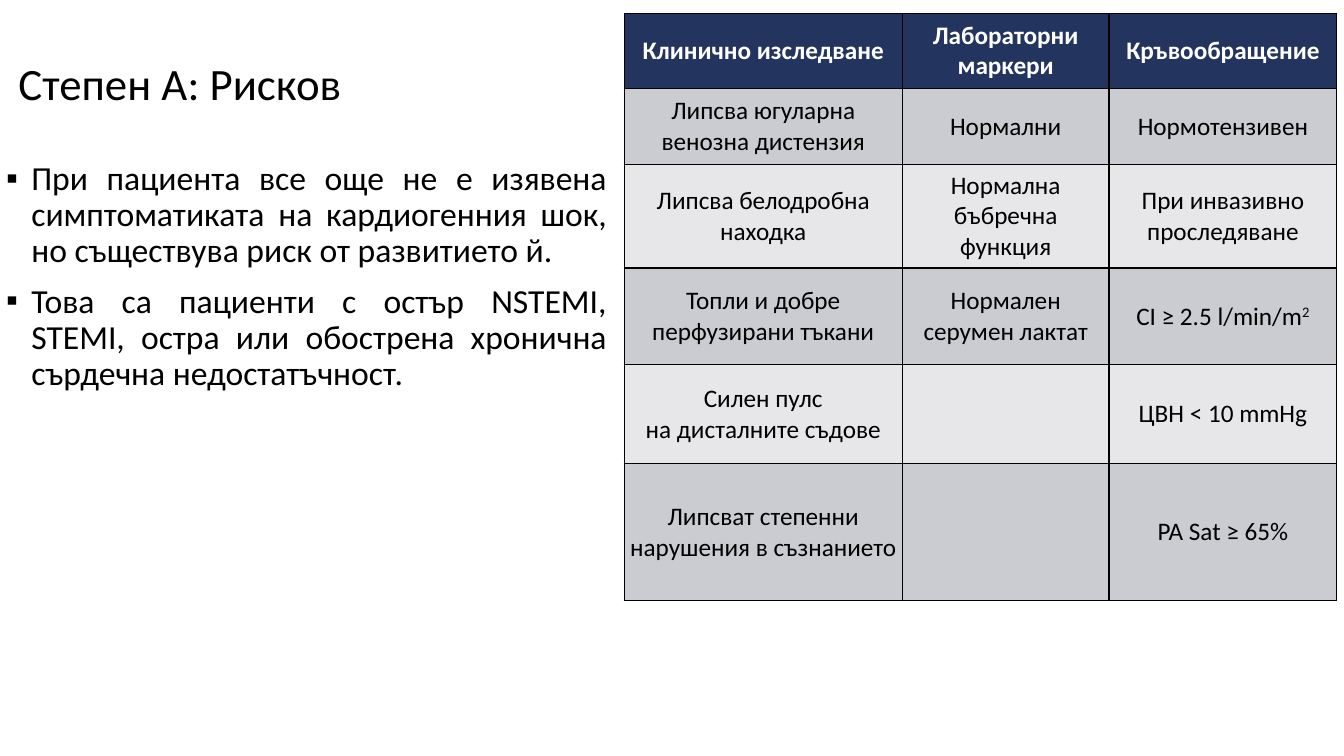
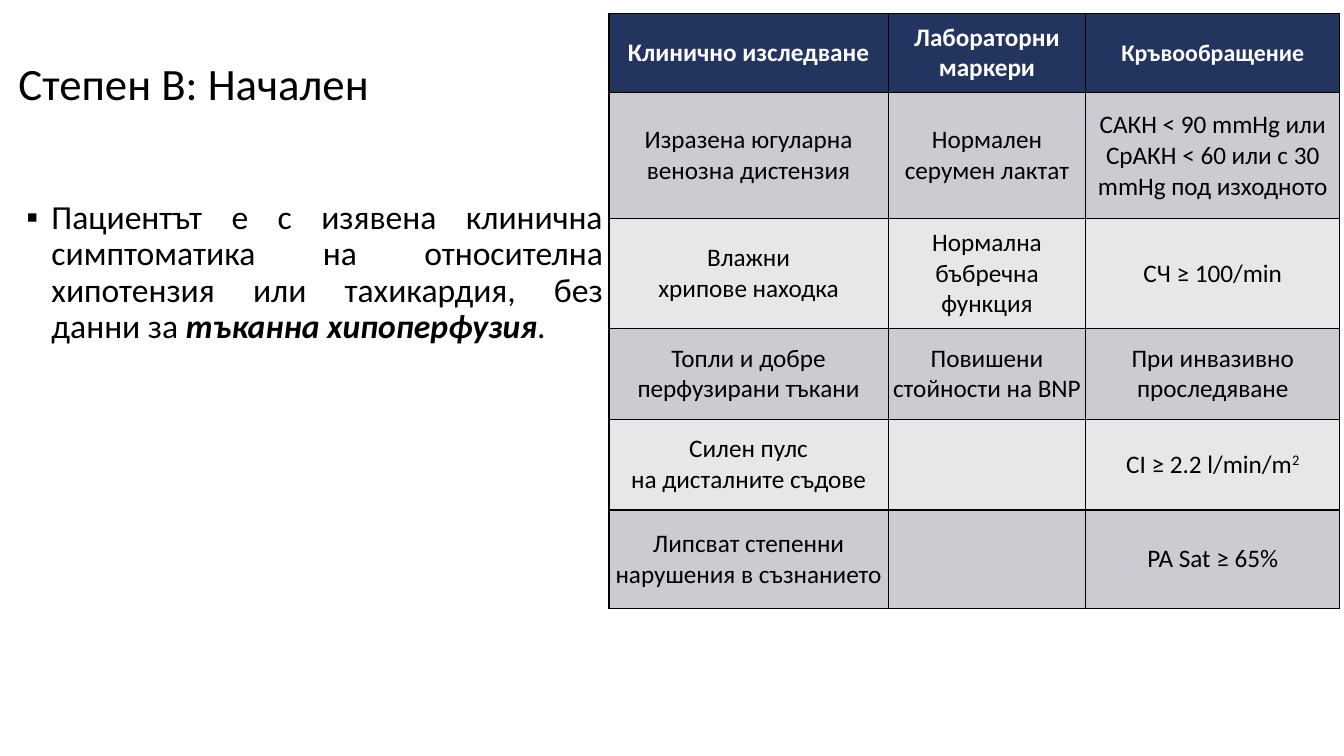
from lxml import etree
from pptx import Presentation, util as u
from pptx.dml.color import RGBColor
from pptx.enum import text
from pptx.oxml import ns

WIDTH, HEIGHT = u.Inches(13.33), u.Inches(7.5)
FONT = "Calibri"
BLACK = RGBColor(0x00, 0x00, 0x00)
WHITE = RGBColor(0xFF, 0xFF, 0xFF)
NAVY = RGBColor(0x23, 0x34, 0x5E)
BANDS = (RGBColor(0xCB, 0xCC, 0xD1), RGBColor(0xE7, 0xE7, 0xE9))

TITLE_BOX = (1, 1.73, 86.27, 19.33)
BODY_HEIGHT = 45.47
TABLE_TOP = 1.73
INSET = u.Inches(0.05)
BULLET_INDENT = u.Inches(0.25)
BORDER = u.Pt(1)

EMPHASIS = {"bold": True, "italic": True}
RAISED = {"raised": True}
HEADINGS = ["Клинично изследване", "Лабораторни маркери"]
WARM = "Топли и добре перфузирани тъкани"
PULSE = "Силен пулс\nна дисталните съдове"
AWARE = "Липсват степенни нарушения в съзнанието"
KIDNEY = "Нормална бъбречна\nфункция"
INVASIVE = "При инвазивно проследяване"
SATURATION = "PA Sat ≥ 65%"

STAGES = [
    {
        "title": "Степен А: Pисков",
        "body_box": (0.08, 20.67, 45.46, BODY_HEIGHT),
        "body": [
            "При пациента все още не е изявена симптоматиката на "
            "кардиогенния шок, но съществува риск от развитието й.",
            "Това са пациенти с остър NSTEMI, STEMI, остра или обострена "
            "хронична сърдечна недостатъчност.",
        ],
        "table_left": 46.44,
        "columns": (20.7, 15.38, 16.95),
        "rows": (10, 10, 13.73, 12.8, 13.07, 18.13),
        "cells": [
            HEADINGS + ["Кръвообращение"],
            ["Липсва югуларна\nвенозна дистензия", "Нормални", "Нормотензивен"],
            ["Липсва белодробна находка", KIDNEY, INVASIVE],
            [WARM, "Нормален\nсерумен лактат",
             [("CI ≥ 2.5 l/min/m", {}), ("2", RAISED)]],
            [PULSE, "", "ЦВН < 10 mmHg"],
            [AWARE, "", SATURATION],
        ],
    },
    {
        "title": "Степен B: Начален",
        "body_box": (1.58, 25.87, 43.66, BODY_HEIGHT),
        "body": [
            [("Пациентът е с изявена клинична симптоматика на относителна "
              "хипотензия или тахикардия, без данни за ", {}),
             ("тъканна хипоперфузия", EMPHASIS),
             (".", {})],
        ],
        "table_left": 45.31,
        "columns": (20.78, 14.7, 18.9),
        "rows": (10.53, 16.67, 14.53, 12, 12, 13.07),
        "cells": [
            HEADINGS + [[("Кръвообращение", {"size": 17})]],
            ["Изразена югуларна венозна дистензия", "Нормален серумен лактат",
             "САКН < 90 mmHg или СрАКН < 60 или с 30 mmHg под изходното"],
            ["Влажни\nхрипове находка", KIDNEY, "СЧ ≥ 100/min"],
            [WARM, "Повишени стойности на BNP", INVASIVE],
            [PULSE, "", [("CI ≥ 2.2 l/min/m", {}), ("2", RAISED)]],
            [AWARE, "", SATURATION],
        ],
    },
]


def across(percent):
    return round(WIDTH * percent / 100)


def down(percent):
    return round(HEIGHT * percent / 100)


def place(shape, box):
    left, top, width, height = box
    shape.left, shape.top = across(left), down(top)
    shape.width, shape.height = across(width), down(height)


def add_runs(paragraph, content, size, color=BLACK, bold=False):
    """Add a plain string, or a list of (words, style) pairs."""
    pairs = [(content, {})] if isinstance(content, str) else content
    for words, style in pairs:
        run = paragraph.add_run()
        run.text = words
        font = run.font
        font.name = FONT
        font.size = u.Pt(style.get("size", size))
        font.bold = style.get("bold", bold)
        font.italic = style.get("italic", False)
        font.color.rgb = color
        if style.get("raised"):
            run._r.get_or_add_rPr().set("baseline", "30000")


def next_paragraph(frame, index):
    return frame.add_paragraph() if index else frame.paragraphs[0]


def prepare_frame(shape, anchor):
    frame = shape.text_frame
    frame.word_wrap = True
    frame.auto_size = text.MSO_AUTO_SIZE.NONE
    frame.vertical_anchor = anchor
    frame.margin_left = frame.margin_right = INSET
    frame.margin_top = frame.margin_bottom = INSET
    return frame


def set_title(shape, words):
    place(shape, TITLE_BOX)
    frame = prepare_frame(shape, text.MSO_ANCHOR.MIDDLE)
    paragraph = frame.paragraphs[0]
    paragraph.alignment = text.PP_ALIGN.LEFT
    paragraph.line_spacing = 0.9
    add_runs(paragraph, words, 32)


def add_bullet(paragraph):
    properties = paragraph._p.get_or_add_pPr()
    properties.set("marL", str(BULLET_INDENT))
    properties.set("indent", str(-BULLET_INDENT))
    etree.SubElement(properties, ns.qn("a:buFont")).set("typeface", "Arial")
    etree.SubElement(properties, ns.qn("a:buChar")).set("char", "▪")


def set_body(shape, box, items):
    place(shape, box)
    frame = prepare_frame(shape, text.MSO_ANCHOR.TOP)
    for index, item in enumerate(items):
        paragraph = next_paragraph(frame, index)
        add_bullet(paragraph)
        paragraph.alignment = text.PP_ALIGN.JUSTIFY
        paragraph.line_spacing = 0.9
        paragraph.space_before = u.Pt(10 if index else 0)
        add_runs(paragraph, item, 24)


def add_borders(cell):
    properties = cell._tc.get_or_add_tcPr()
    for side in ("lnL", "lnR", "lnT", "lnB"):
        line = etree.SubElement(properties, ns.qn(f"a:{side}"), w=str(BORDER))
        fill = etree.SubElement(line, ns.qn("a:solidFill"))
        etree.SubElement(fill, ns.qn("a:srgbClr"), val=str(BLACK))


def set_cell(cell, content, row):
    add_borders(cell)
    cell.fill.solid()
    cell.fill.fore_color.rgb = BANDS[(row - 1) % 2] if row else NAVY
    cell.vertical_anchor = text.MSO_ANCHOR.MIDDLE
    cell.margin_left = cell.margin_right = 0
    cell.margin_top = cell.margin_bottom = 0
    if not content:
        return
    parts = content.split("\n") if isinstance(content, str) else [content]
    for index, part in enumerate(parts):
        paragraph = next_paragraph(cell.text_frame, index)
        paragraph.alignment = text.PP_ALIGN.CENTER
        add_runs(paragraph, part, 18, BLACK if row else WHITE, bold=not row)


def add_findings_table(slide, left, columns, rows, cells):
    frame = slide.shapes.add_table(
        len(rows), len(columns), across(left), down(TABLE_TOP),
        across(sum(columns)), down(sum(rows)))
    table = frame.table
    table.horz_banding = False
    for column, share in zip(table.columns, columns):
        column.width = across(share)
    for row, share in zip(table.rows, rows):
        row.height = down(share)
    for row, contents in enumerate(cells):
        for column, content in enumerate(contents):
            set_cell(table.cell(row, column), content, row)


def add_stage_slide(presentation, stage):
    slide = presentation.slides.add_slide(presentation.slide_layouts[1])
    set_title(slide.shapes.title, stage["title"])
    set_body(slide.placeholders[1], stage["body_box"], stage["body"])
    add_findings_table(slide, stage["table_left"], stage["columns"],
                       stage["rows"], stage["cells"])


def main():
    presentation = Presentation()
    presentation.slide_width, presentation.slide_height = WIDTH, HEIGHT
    for stage in STAGES:
        add_stage_slide(presentation, stage)
    presentation.save("out.pptx")


if __name__ == "__main__":
    main()
